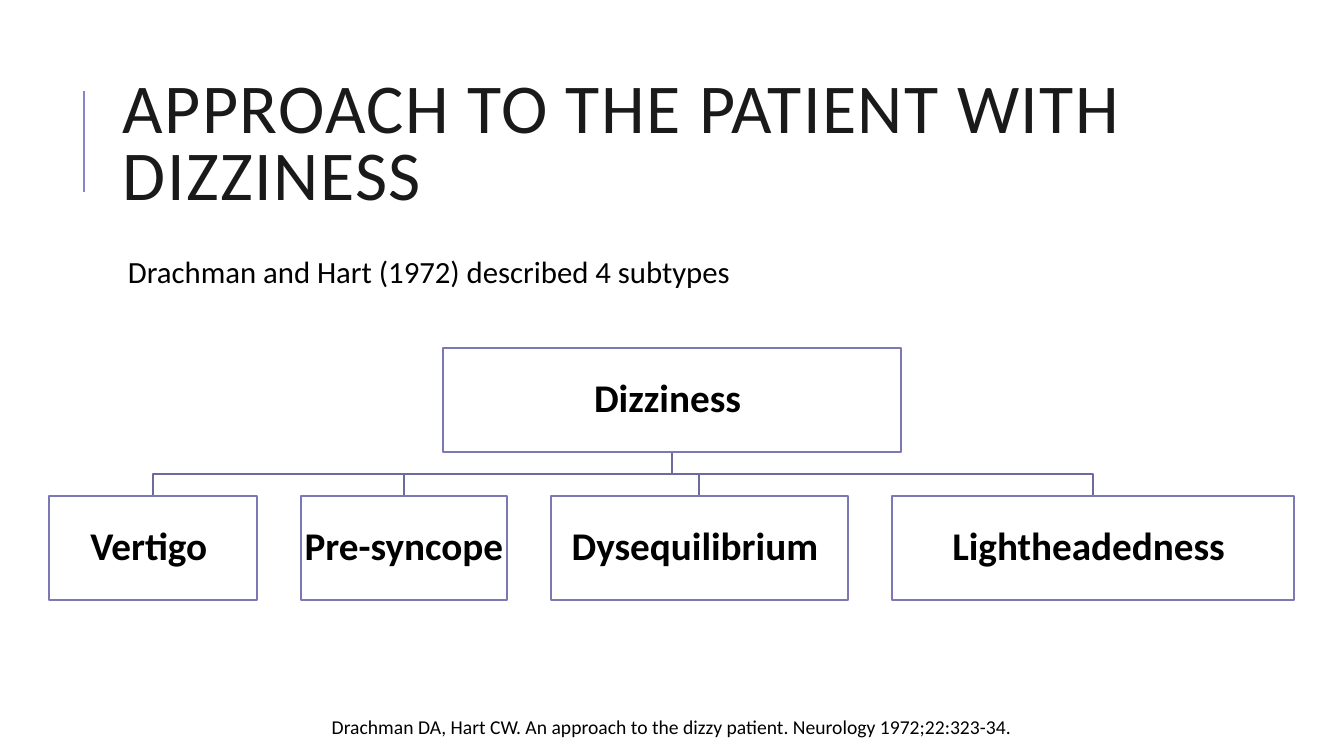
from dataclasses import dataclass

from lxml import etree
from pptx import Presentation
from pptx import util as u
from pptx.dml.color import RGBColor
from pptx.enum import shapes, text
from pptx.oxml.ns import qn

Pt = u.Pt
FONT = "Calibri"
BLACK, WHITE, TITLE_INK = "000000", "FFFFFF", "1A1A1A"
ACCENT, BOX_LINE, BRANCH_LINE = "8784C7", "7B78B5", "6C6A9F"

SLIDE_WIDTH, SLIDE_HEIGHT = 960, 540
CONTENT_LEFT, CONTENT_WIDTH = 80.64, 765.36
ROOT_TOP, ROOT_WIDTH = 248.4, 326.9
SUBTYPE_TOP, SUBTYPE_LEFT, SUBTYPE_GAP = 354.3, 35.3, 31.4
BOX_HEIGHT = 74.2


@dataclass
class Box:
    label: str
    left: float
    top: float
    width: float

    @property
    def center(self) -> float:
        return self.left + self.width / 2

    @property
    def bottom(self) -> float:
        return self.top + BOX_HEIGHT


def color(hex_string: str) -> RGBColor:
    return RGBColor.from_string(hex_string)


def style_line(shape, hex_string: str, width: float) -> None:
    shape.line.color.rgb = color(hex_string)
    shape.line.width = Pt(width)


def write(shape, words: str, size: float, ink: str = BLACK, bold: bool = False,
          align=text.PP_ALIGN.LEFT, spacing: float = 1.0,
          anchor=text.MSO_ANCHOR.TOP, margins=(7.2, 3.6, 7.2, 3.6)):
    frame = shape.text_frame
    frame.word_wrap = True
    frame.auto_size = text.MSO_AUTO_SIZE.NONE
    frame.vertical_anchor = anchor
    (frame.margin_left, frame.margin_top,
     frame.margin_right, frame.margin_bottom) = (Pt(margin) for margin in margins)
    paragraph = frame.paragraphs[0]
    paragraph.alignment = align
    paragraph.line_spacing = spacing
    run = paragraph.add_run()
    run.text = words
    run.font.name = FONT
    run.font.size = Pt(size)
    run.font.bold = bold
    run.font.color.rgb = color(ink)
    return run


def draw_branch(slide, parent: Box, child: Box) -> None:
    middle = (parent.bottom + child.top) / 2
    builder = slide.shapes.build_freeform(Pt(parent.center), Pt(parent.bottom))
    corners = [(parent.center, middle), (child.center, middle), (child.center, child.top)]
    builder.add_line_segments([(Pt(x), Pt(y)) for x, y in corners], close=False)
    branch = builder.convert_to_shape()
    branch.shadow.inherit = False
    branch.fill.background()
    style_line(branch, BRANCH_LINE, 1.25)


def draw_box(slide, box: Box) -> None:
    shape = slide.shapes.add_shape(
        shapes.MSO_SHAPE.RECTANGLE,
        Pt(box.left), Pt(box.top), Pt(box.width), Pt(BOX_HEIGHT))
    shape.shadow.inherit = False
    shape.fill.solid()
    shape.fill.fore_color.rgb = color(WHITE)
    style_line(shape, BOX_LINE, 1.5)
    write(shape, box.label, 28, bold=True, align=text.PP_ALIGN.CENTER, spacing=0.9,
          anchor=text.MSO_ANCHOR.MIDDLE, margins=(1.4,) * 4)


def main() -> None:
    presentation = Presentation()
    presentation.slide_width = Pt(SLIDE_WIDTH)
    presentation.slide_height = Pt(SLIDE_HEIGHT)
    slide = presentation.slides.add_slide(presentation.slide_layouts[5])

    # Title and its accent rule
    rule = slide.shapes.add_connector(
        shapes.MSO_CONNECTOR.STRAIGHT, Pt(60), Pt(136.8), Pt(60), Pt(64.8))
    style_line(rule, ACCENT, 1.5)
    etree.SubElement(rule._element.spPr, qn("a:effectLst"))

    title = slide.shapes.title
    title.left, title.top = Pt(CONTENT_LEFT), Pt(46.1)
    title.width, title.height = Pt(CONTENT_WIDTH), Pt(118.1)
    heading = write(title, "APPROACH TO THE PATIENT WITH DIZZINESS", 50, TITLE_INK,
                    spacing=0.8, anchor=text.MSO_ANCHOR.MIDDLE)
    heading._r.get_or_add_rPr().set("spc", "100")

    # Introduction and citation
    introduction = slide.shapes.add_textbox(
        Pt(CONTENT_LEFT), Pt(180), Pt(CONTENT_WIDTH), Pt(316.8))
    write(introduction, "Drachman and Hart (1972) described 4 subtypes", 22,
          spacing=0.9, margins=(10.8, 3.6, 3.6, 3.6))
    citation = slide.shapes.add_textbox(Pt(146.9), Pt(506.9), Pt(666), Pt(24.5))
    write(citation,
          "Drachman DA, Hart CW. An approach to the dizzy patient. Neurology 1972;22:323-34.",
          14, align=text.PP_ALIGN.CENTER)

    # Tree of subtypes
    root = Box("Dizziness ", (SLIDE_WIDTH - ROOT_WIDTH) / 2, ROOT_TOP, ROOT_WIDTH)
    subtypes: list[Box] = []
    left = SUBTYPE_LEFT
    for label, width in [("Vertigo ", 148.3), ("Pre-syncope", 146.9),
                         ("Dysequilibrium ", 212.4), ("Lightheadedness ", 287.3)]:
        subtypes.append(Box(label, left, SUBTYPE_TOP, width))
        left += width + SUBTYPE_GAP
    for subtype in reversed(subtypes):
        draw_branch(slide, root, subtype)
    for box in [root, *subtypes]:
        draw_box(slide, box)

    presentation.save("out.pptx")


if __name__ == "__main__":
    main()
